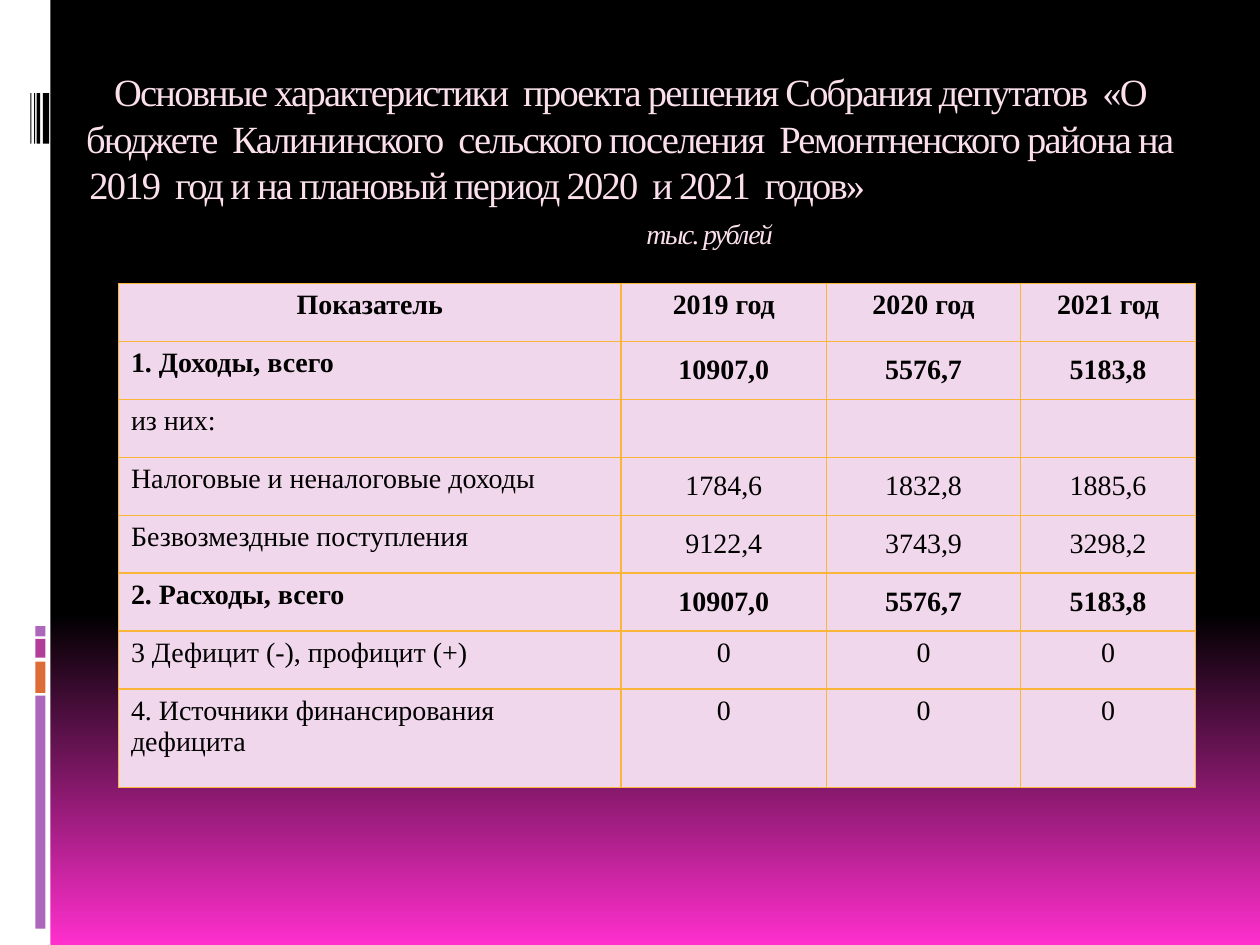
from lxml.etree import SubElement
from pptx import Presentation
from pptx.dml.color import RGBColor
from pptx.enum.shapes import MSO_SHAPE
from pptx.enum.text import MSO_ANCHOR, PP_ALIGN
from pptx.oxml.ns import qn
from pptx.util import Inches, Pt

FONT = "Times New Roman"
SLIDE_WIDTH, SLIDE_HEIGHT = 10, 7.5

BUDGET = [
    ["Показатель", "2019 год", "2020 год", "2021 год"],
    ["1. Доходы, всего", "10907,0", "5576,7", "5183,8"],
    ["из них:", "", "", ""],
    ["Налоговые и неналоговые доходы", "1784,6", "1832,8", "1885,6"],
    ["Безвозмездные поступления", "9122,4", "3743,9", "3298,2"],
    ["2. Расходы, всего", "10907,0", "5576,7", "5183,8"],
    ["3 Дефицит (-), профицит (+)", "0", "0", "0"],
    ["4. Источники финансирования дефицита", "0", "0", "0"],
]
BOLD_ROWS = {0, 1, 5}
MIDDLE_ROWS = {1, 3, 4, 5}
COLUMN_WIDTHS = [3.99, 1.63, 1.54, 1.39]
ROW_HEIGHTS = [0.46] * 7 + [0.78]

# Text, size, italic, alignment, left indent, line height
TITLE = [
    ("Основные характеристики  проекта решения Собрания депутатов  «О бюджете  "
     "Калининского  сельского поселения  Ремонтненского района на",
     22, False, PP_ALIGN.CENTER, 0, 26.5),
    ("2019  год и на плановый период 2020  и 2021  годов»",
     22, False, PP_ALIGN.LEFT, 0.09, 26.5),
    ("тыс. рублей", 16, True, PP_ALIGN.LEFT, 4.51, 24.5),
]


def color(hex_string):
    return RGBColor.from_string(hex_string)


def style_run(run, size, hex_color, bold=False, italic=False):
    font = run.font
    font.name, font.size = FONT, Pt(size)
    font.bold, font.italic = bold, italic
    font.color.rgb = color(hex_color)


def set_background(slide):
    fill = slide.background.fill
    fill.gradient()
    fill.gradient_angle = 270
    for stop, (position, hex_color) in zip(
            fill.gradient_stops, [(0.65, "000000"), (1, "FF2FCD")]):
        stop.position = position
        stop.color.rgb = color(hex_color)


def add_bar(slide, left, top, width, height, hex_color):
    bar = slide.shapes.add_shape(
        MSO_SHAPE.RECTANGLE, Inches(left), Inches(top), Inches(width), Inches(height))
    bar.shadow.inherit = False
    bar.fill.solid()
    bar.fill.fore_color.rgb = color(hex_color)
    bar.line.fill.background()


def add_side_strip(slide, left, top, width, height):
    add_bar(slide, left, top, width, height, "FFFFFF")
    # Coloured blocks
    for offset, block_height, hex_color in [
            (5.52, 1.85, "AC66BB"), (5.25, 0.25, "DE6C36"),
            (5.07, 0.15, "B13F9A"), (4.97, 0.08, "AC66BB")]:
        add_bar(slide, left + 0.28, top + offset, 0.08, block_height, hex_color)
    # Black stripes
    for offset, stripe_width in [(0.34, 0.05), (0.29, 0.03), (0.27, 0.01), (0.24, 0.01)]:
        add_bar(slide, left + offset, top + 0.74, stripe_width, 0.4, "000000")


def add_title(slide, left, top, width, height):
    frame = slide.shapes.add_textbox(
        Inches(left), Inches(top), Inches(width), Inches(height)).text_frame
    frame.word_wrap = True
    frame.margin_left = frame.margin_right = Inches(0.03)
    frame.margin_top = Inches(0.07)
    frame.text = "\n".join(line[0] for line in TITLE)
    for paragraph, (_, size, italic, align, indent, line_height) in zip(
            frame.paragraphs, TITLE):
        paragraph.alignment = align
        paragraph.line_spacing = Pt(line_height)
        paragraph._p.get_or_add_pPr().set("marL", str(Inches(indent)))
        run = paragraph.runs[0]
        style_run(run, size, "FBE0EC", italic=italic)
        run._r.get_or_add_rPr().set("spc", "-100")


def add_borders(cell, hex_color, width):
    properties = cell._tc.get_or_add_tcPr()
    for side in ("a:lnL", "a:lnR", "a:lnT", "a:lnB"):
        line = SubElement(properties, qn(side), w=str(Pt(width)))
        fill = SubElement(line, qn("a:solidFill"))
        SubElement(fill, qn("a:srgbClr"), val=hex_color)


def add_budget_table(slide, left, top, width, height):
    table = slide.shapes.add_table(
        len(BUDGET), len(COLUMN_WIDTHS),
        Inches(left), Inches(top), Inches(width), Inches(height)).table
    for column, column_width in zip(table.columns, COLUMN_WIDTHS):
        column.width = Inches(column_width)
    for row, row_height in zip(table.rows, ROW_HEIGHTS):
        row.height = Inches(row_height)
    for r, values in enumerate(BUDGET):
        for c, value in enumerate(values):
            cell = table.cell(r, c)
            add_borders(cell, "F9B639", 1)
            cell.fill.solid()
            cell.fill.fore_color.rgb = color("F1D7EC")
            if c > 0 and r in MIDDLE_ROWS:
                cell.vertical_anchor = MSO_ANCHOR.MIDDLE
                cell.margin_left = cell.margin_right = Inches(0.07)
                cell.margin_top = cell.margin_bottom = 0
            if not value:
                continue
            cell.text_frame.text = value
            paragraph = cell.text_frame.paragraphs[0]
            centred = r == 0 or c > 0
            paragraph.alignment = PP_ALIGN.CENTER if centred else PP_ALIGN.LEFT
            style_run(paragraph.runs[0], 16, "000000", bold=r in BOLD_ROWS)


def main():
    presentation = Presentation()
    presentation.slide_width = Inches(SLIDE_WIDTH)
    presentation.slide_height = Inches(SLIDE_HEIGHT)
    slide = presentation.slides.add_slide(presentation.slide_layouts[6])
    set_background(slide)
    add_side_strip(slide, 0, 0, 0.4, SLIDE_HEIGHT)
    add_title(slide, 0.59, 0.47, 8.82, 1.72)
    add_budget_table(slide, 0.94, 2.25, sum(COLUMN_WIDTHS), sum(ROW_HEIGHTS))
    presentation.save("out.pptx")


if __name__ == "__main__":
    main()
